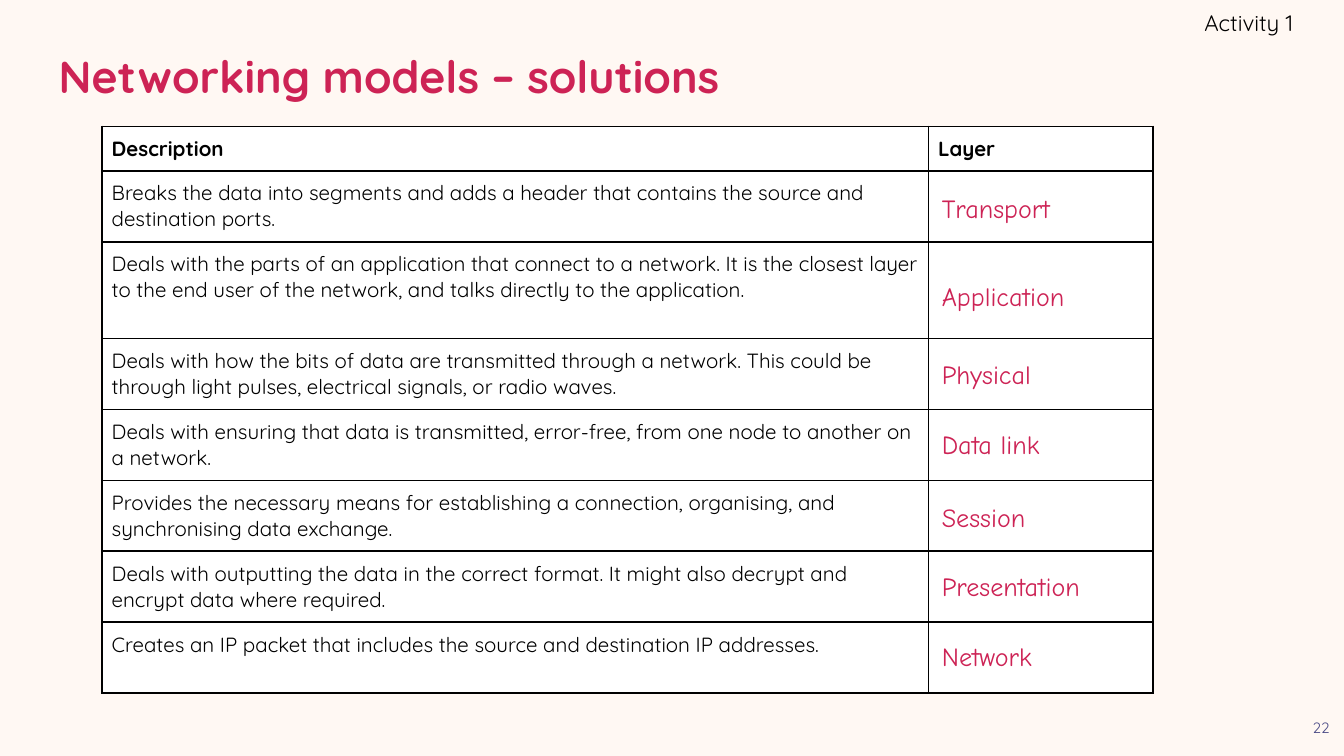
from pptx import Presentation
from pptx.dml.color import RGBColor
from pptx.enum.text import MSO_ANCHOR, PP_ALIGN
from pptx.oxml import parse_xml
from pptx.oxml.ns import nsdecls
from pptx.util import Cm, Pt

PINK, BLACK, WHITE, CREAM, VIOLET = "CD2355", "000000", "FFFFFF", "FFF8F3", "494985"
TITLE = {"name": "Quicksand", "size": Pt(24), "bold": True, "color": PINK}
ACTIVITY = {"name": "Quicksand", "size": Pt(12), "color": BLACK}
HEADING = {"name": "Quicksand", "size": Pt(11), "bold": True, "color": BLACK}
BODY = {**HEADING, "bold": False}
ANSWER = {"name": "Comic Neue", "size": Pt(14), "color": PINK}
NUMBER = {"name": "Quicksand", "size": Pt(8), "color": VIOLET}

HEADINGS = ["Description", "Layer"]
LAYERS = [
    ("Breaks the data into segments and adds a header that contains the source and destination ports.",
     "Transport", 1.34, 0.99),
    ("Deals with the parts of an application that connect to a network. It is the closest layer "
     "to the end user of the network, and talks directly to the application.",
     "Application", 1.83, 2.66),
    ("Deals with how the bits of data are transmitted through a network. This could be through "
     "light pulses, electrical signals, or radio waves.",
     "Physical", 1.34, 4.14),
    ("Deals with ensuring that data is transmitted, error-free, from one node to another on a network.",
     "Data link", 1.34, 5.46),
    ("Provides the necessary means for establishing a connection, organising, and synchronising "
     "data exchange.",
     "Session", 1.34, 6.83),
    ("Deals with outputting the data in the correct format. It might also decrypt and encrypt "
     "data where required.",
     "Presentation", 1.34, 8.15),
    ("Creates an IP packet that includes the source and destination IP addresses.",
     "Network", 1.34, 9.47),
]
HEADER_HEIGHT = 0.84


def paint(color_format, value):
    color_format.rgb = RGBColor.from_string(value)


def set_attributes(target, values):
    for name, value in values.items():
        setattr(target, name, value)


def write(paragraph, text, style):
    run = paragraph.add_run()
    run.text = text
    set_attributes(run.font, {key: value for key, value in style.items() if key != "color"})
    paint(run.font.color, style["color"])


def add_text(slide, box, text, style, align=PP_ALIGN.LEFT, **frame_values):
    frame = slide.shapes.add_textbox(*map(Cm, box)).text_frame
    margins = {f"margin_{side}": Cm(0.25) for side in ("left", "top", "right", "bottom")}
    set_attributes(frame, {"word_wrap": True, **margins, **frame_values})
    paragraph = frame.paragraphs[0]
    paragraph.alignment = align
    write(paragraph, text, style)


def format_cell(cell):
    margins = {f"margin_{side}": Cm(0.18) for side in ("left", "top", "right", "bottom")}
    set_attributes(cell, margins)
    properties = cell._tc.get_or_add_tcPr()
    for side in ("lnL", "lnR", "lnT", "lnB"):
        properties.append(parse_xml(
            f'<a:{side} {nsdecls("a")} w="{Pt(1)}"><a:solidFill>'
            f'<a:srgbClr val="{BLACK}"/></a:solidFill></a:{side}>'))
    cell.fill.solid()
    paint(cell.fill.fore_color, WHITE)


def add_layer_table(slide, box):
    left, top, width, height = box
    layer_width = 4.24
    description_width = width - layer_width
    table = slide.shapes.add_table(len(LAYERS) + 1, 2, *map(Cm, box)).table
    set_attributes(table, {"first_row": False, "horz_banding": False})
    for column, column_width in zip(table.columns, (description_width, layer_width)):
        column.width = Cm(column_width)
    for row, row_height in zip(table.rows, [HEADER_HEIGHT] + [layer[2] for layer in LAYERS]):
        row.height = Cm(row_height)
    for cell in table.iter_cells():
        format_cell(cell)
    for column, heading in enumerate(HEADINGS):
        write(table.cell(0, column).text_frame.paragraphs[0], heading, HEADING)
    for row, (description, answer, _, offset) in enumerate(LAYERS, 1):
        write(table.cell(row, 0).text_frame.paragraphs[0], description, BODY)
        add_text(slide, (left + description_width, top + offset, 3.28, 1.12), answer, ANSWER)


def add_header(slide, box):
    left, top, width, height = box
    add_text(slide, (left + 0.86, top + 0.46, width - 1.73, 1.93),
             "Networking models – solutions", TITLE, vertical_anchor=MSO_ANCHOR.MIDDLE)
    add_text(slide, (left + width - 6.4, top, 5.44, 0.86), "Activity 1", ACTIVITY,
             PP_ALIGN.RIGHT, vertical_anchor=MSO_ANCHOR.MIDDLE, margin_right=0)


def add_slide_number(slide, box):
    add_text(slide, box, "22", NUMBER, PP_ALIGN.CENTER, word_wrap=False)


def main():
    presentation = Presentation()
    set_attributes(presentation, {"slide_width": Cm(25.4), "slide_height": Cm(14.29)})
    slide = presentation.slides.add_slide(presentation.slide_layouts[6])
    slide.background.fill.solid()
    paint(slide.background.fill.fore_color, CREAM)
    table_height = HEADER_HEIGHT + sum(layer[2] for layer in LAYERS)
    add_header(slide, (0, 0, 25.4, 2.39))
    add_layer_table(slide, (1.93, 2.39, 19.86, table_height))
    add_slide_number(slide, (24.54, 13.41, 0.86, 0.86))
    presentation.save("out.pptx")


if __name__ == "__main__":
    main()
